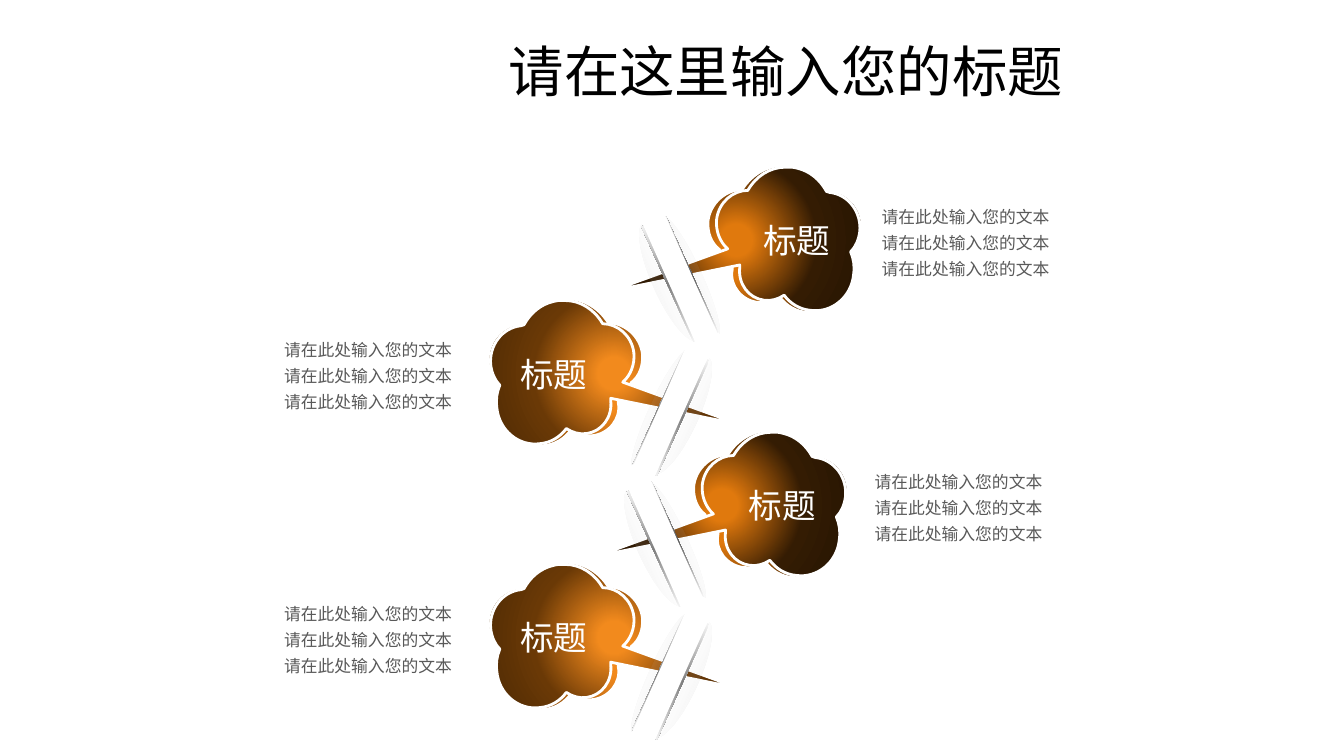
from math import cos, radians, sin

from lxml import etree
from pptx import Presentation
from pptx.dml.color import RGBColor
from pptx.enum.shapes import MSO_SHAPE
from pptx.enum.text import MSO_ANCHOR, PP_ALIGN
from pptx.oxml.ns import qn
from pptx.util import Cm, Pt

RECTANGLE = MSO_SHAPE.RECTANGLE
MIDDLE = MSO_ANCHOR.MIDDLE
LEFT, CENTER, JUSTIFY = PP_ALIGN.LEFT, PP_ALIGN.CENTER, PP_ALIGN.JUSTIFY
FONT = "Noto Sans CJK SC"

# A branch is designed on a grid of this step, 260 steps wide
STEP = Cm(2.54) / 100
BRANCH_WIDTH = 260

# Outlines: a start point, then lines (2 numbers) and curves (6 numbers)
BACK_CLOUD = [
    (68, 2), (54, 6, 43, 15, 37, 28), (35, 28, 34, 28, 33, 28),
    (12, 30, -2, 50, 0, 71), (1, 79, 5, 87, 10, 93), (7, 100, 6, 108, 7, 116),
    (9, 141, 31, 159, 55, 156), (66, 155, 76, 149, 83, 139),
    (89, 144, 97, 146, 104, 145), (121, 143, 134, 127, 131, 110),
    (131, 107), (254, 130), (144, 89), (153, 82, 157, 70, 156, 58),
    (154, 40, 139, 26, 122, 26), (112, 9, 94, -1, 74, 1), (72, 1, 70, 2, 68, 2),
]
FRONT_CLOUD = [
    (81, 8), (96, 8, 110, 17, 118, 31), (133, 31, 147, 43, 149, 60),
    (150, 71, 146, 82, 138, 89), (171, 101, 221, 119, 254, 131),
    (126, 105), (126, 107), (128, 124, 117, 138, 102, 140),
    (95, 141, 88, 139, 82, 135), (76, 143, 67, 149, 56, 150),
    (35, 153, 15, 137, 13, 114), (12, 106, 13, 99, 16, 92),
    (11, 87, 8, 80, 7, 72), (5, 53, 18, 35, 37, 33), (38, 32, 39, 32, 40, 32),
    (46, 21, 56, 12, 69, 9), (70, 9, 72, 8, 74, 8), (76, 8, 79, 8, 81, 8),
]
INNER_SHADE = [(164, 113), (151, 142, 144, 168, 147, 174), (198, 60),
               (192, 62, 177, 84, 164, 113)]
OUTER_SHADE = [(211, 129), (198, 158, 181, 179, 172, 180), (223, 66),
               (229, 73, 224, 100, 211, 129)]

# Gradient stops: position, colour, opacity (all in percent)
LIGHT_CLOUD = [(11, "F28A1D", 100), (56, "6A3906", 100), (95, "502B04", 100)]
DARK_CLOUD = [(11, "E0790D", 100), (56, "341C03", 100), (95, "271502", 100)]
SHADE = [(26, "F2F2F2", 0), (100, "808080", 27)]

# Left, top, mirrored, left of the text
BRANCHES = [
    (Cm(12.19), Cm(7.37), False, Cm(6.91)),
    (Cm(15.24), Cm(4.01), True, Cm(21.97)),
    (Cm(14.88), Cm(10.69), True, Cm(21.79)),
    (Cm(12.19), Cm(14.02), False, Cm(6.91)),
]


def color(value):
    return RGBColor.from_string(value)


def fill_gradient(shape, stops, angle=None):
    """Fill linearly at an angle, or from the centre outwards without one."""
    gradient = etree.Element(qn("a:gradFill"), rotWithShape="1")
    stop_list = etree.SubElement(gradient, qn("a:gsLst"))
    for position, value, opacity in stops:
        stop = etree.SubElement(stop_list, qn("a:gs"), pos=str(position * 1000))
        rgb = etree.SubElement(stop, qn("a:srgbClr"), val=value)
        if opacity < 100:
            etree.SubElement(rgb, qn("a:alpha"), val=str(opacity * 1000))
    if angle is None:
        circle = etree.SubElement(gradient, qn("a:path"), path="circle")
        etree.SubElement(circle, qn("a:fillToRect"), {side: "50000" for side in "ltrb"})
    else:
        etree.SubElement(gradient, qn("a:lin"), ang=str(angle * 60000), scaled="0")
    shape.fill.background()
    properties = shape._element.spPr
    properties.replace(properties.find(qn("a:noFill")), gradient)


def write(shape, lines, size, value, alignment, spacing=1.0, font=FONT):
    frame = shape.text_frame
    frame.word_wrap = True
    frame.vertical_anchor = MIDDLE
    frame.text = "\n".join(lines)
    for paragraph in frame.paragraphs:
        paragraph.alignment = alignment
        paragraph.line_spacing = spacing
        paragraph.font.size = Pt(size)
        paragraph.font.name = font
        paragraph.font.color.rgb = color(value)
        etree.SubElement(paragraph.font._element, qn("a:ea"), typeface=FONT)


def add_outline(slide, left, top, mirrored, outline, box=None, rotation=0):
    """Draw an outline; with a box, turn it upright there and rotate it back."""
    if box:
        box, rotation = place(left, top, mirrored, box, rotation)
        center_x, center_y = box[0] + box[2] / 2, box[1] + box[3] / 2
    else:
        center_x = center_y = 0
    cosine, sine = cos(radians(rotation)), sin(radians(rotation))
    points = []
    for segment in outline:
        for x, y in zip(segment[::2], segment[1::2]):
            x = left + STEP * (BRANCH_WIDTH - x if mirrored else x) - center_x
            y = top + STEP * y - center_y
            points.append((round(center_x + x * cosine + y * sine),
                           round(center_y - x * sine + y * cosine)))
    builder = slide.shapes.build_freeform(*points[0])
    builder.add_line_segments(points[1:], close=True)
    shape = builder.convert_to_shape()
    shape.shadow.inherit = False
    shape.line.fill.background()

    # Merge each three points of a curve into one Bezier segment
    drawing = next(shape._element.iter(qn("a:path")))
    steps = iter(drawing.findall(qn("a:lnTo")))
    for segment in outline[1:]:
        first = next(steps)
        if len(segment) == 6:
            curve = etree.Element(qn("a:cubicBezTo"))
            drawing.replace(first, curve)
            curve.append(first[0])
            for _ in range(2):
                following = next(steps)
                curve.append(following[0])
                drawing.remove(following)
    if box:
        shape.left, shape.top, shape.width, shape.height = box
        shape.rotation = rotation
    return shape


def place(left, top, mirrored, box, rotation):
    x, y, width, height = box
    if mirrored:
        x, rotation = BRANCH_WIDTH - x - width, 360 - rotation
    return (round(left + STEP * x), round(top + STEP * y),
            round(STEP * width), round(STEP * height)), rotation


def add_bar(slide, left, top, mirrored, box, rotation):
    box, rotation = place(left, top, mirrored, box, rotation)
    shape = slide.shapes.add_shape(RECTANGLE, *box)
    shape.rotation = rotation
    shape.shadow.inherit = False
    shape.line.fill.background()
    return shape


def add_branch(slide, left, top, mirrored, text_left):
    region = slide, left, top, mirrored

    # Double cloud with its needle and label
    back = add_outline(*region, BACK_CLOUD, (46, -35, 161, 264), 106.2)
    front = add_outline(*region, FRONT_CLOUD)
    for cloud in (back, front):
        fill_gradient(cloud, DARK_CLOUD if mirrored else LIGHT_CLOUD)
        cloud.line.color.rgb = color("FFFFFF")
        cloud.line.width = Pt(2)
    write(front, ["标题"], 24, "FFFFFF", CENTER)
    insets = (Cm(3.3), Cm(0.25)) if mirrored else (Cm(0.25), Cm(3.3))
    front.text_frame.margin_left, front.text_frame.margin_right = insets

    # Shaded edges of the white ribbon
    for outline, box in ((INNER_SHADE, (106, 110, 125, 9)),
                         (OUTER_SHADE, (142, 118, 125, 15))):
        fill_gradient(add_outline(*region, outline, box, 294.3), SHADE, 90)
    inner_middle = "595959" if mirrored else "808080"
    for box, middle in (((111, 114, 126, 2), inner_middle),
                        ((134, 123, 126, 2), "808080")):
        edge = add_bar(*region, box, 294.3)
        fill_gradient(edge, [(2, "F2F2F2", 100), (50, middle, 100), (100, "F2F2F2", 100)], 180)
    ribbon = add_bar(*region, (175, 34, 24, 161), 24)
    ribbon.fill.solid()
    ribbon.fill.fore_color.rgb = color("FFFFFF")

    # Description
    description = slide.shapes.add_textbox(text_left, top + Cm(1.05), Cm(5), Cm(1.96))
    write(description, ["请在此处输入您的文本"] * 3, 12, "595959", JUSTIFY, 1.3)


def add_title(slide, left, top, width, height):
    title = slide.shapes.add_textbox(left, top, width, height)
    write(title, ["请在这里输入您的标题"], 39.6, "000000", LEFT, 0.9, "Calibri")


def main():
    presentation = Presentation()
    presentation.slide_width, presentation.slide_height = Cm(33.87), Cm(19.05)
    slide = presentation.slides.add_slide(presentation.slide_layouts[6])
    for branch in BRANCHES:
        add_branch(slide, *branch)
    add_title(slide, Cm(12.57), Cm(1.04), Cm(21.3), Cm(1.68))
    presentation.save("out.pptx")


if __name__ == "__main__":
    main()
